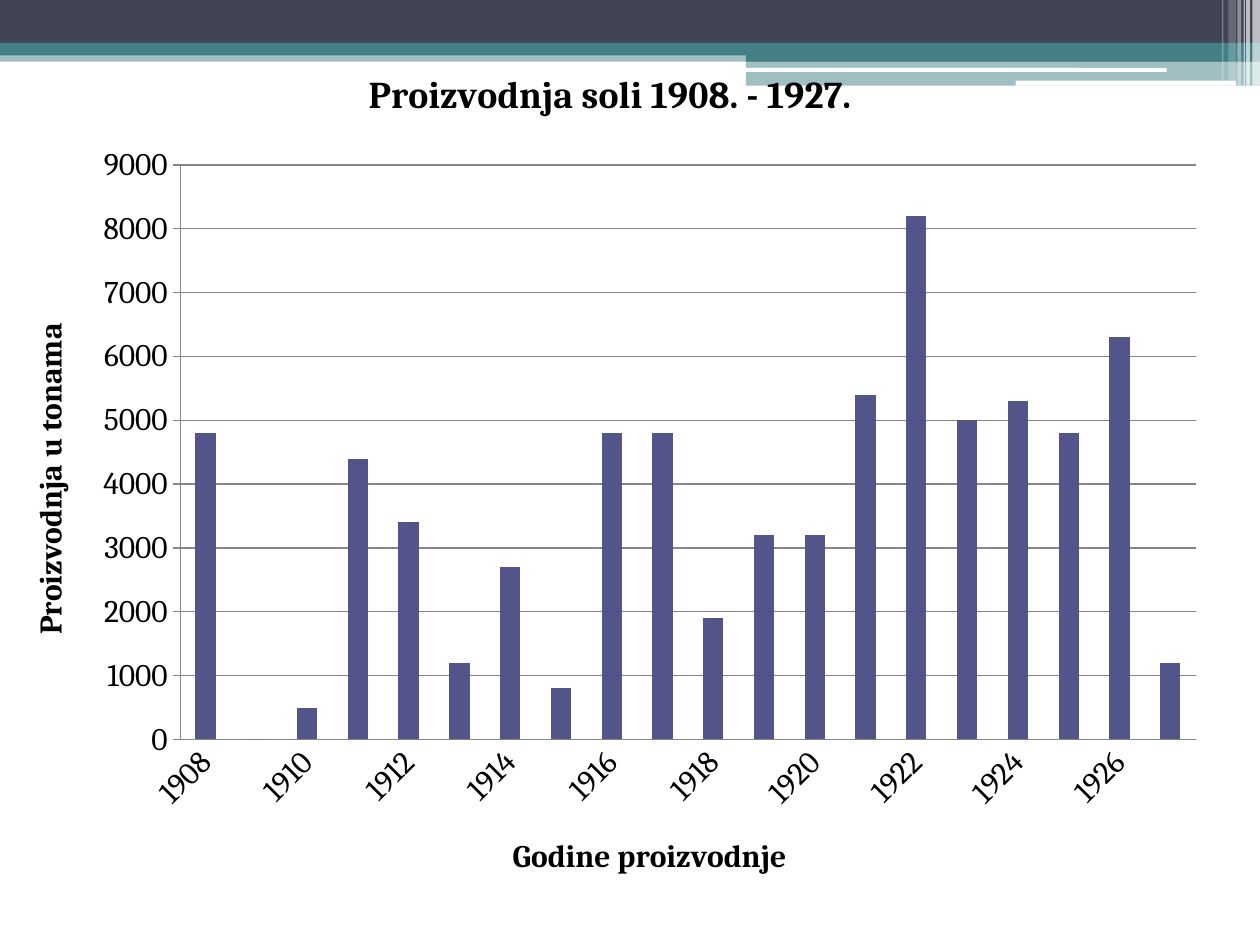
"""Builds a slide with a column chart of salt production from 1908 to 1927."""
from dataclasses import dataclass

from lxml import etree
from pptx import Presentation
from pptx.chart import data as cd
from pptx.dml.color import RGBColor
from pptx.enum import chart as kinds, shapes
from pptx.oxml import ns
from pptx.util import Inches, Pt


@dataclass(frozen=True)
class Theme:
    """Colours, font and type sizes."""
    dark: str = "424456"
    teal: str = "438086"
    white: str = "FFFFFF"
    black: str = "000000"
    bar: str = "53548A"
    grid: str = "868686"
    font: str = "Cambria"
    head: float = 21.6
    body: float = 18


def child(node, tag, **attrs):
    """Append a namespaced element with the given attributes."""
    return etree.SubElement(node, ns.qn(tag), **attrs)


class Deck:
    """Holds the style and the current slide."""

    def __init__(self, theme):
        """Open a blank slide of 10 by 7.5 inches."""
        self.theme = theme
        self.prs = Presentation()
        self.prs.slide_width, self.prs.slide_height = Inches(10), Inches(7.5)
        self.slide = self.prs.slides.add_slide(self.prs.slide_layouts[6])

    def band(self, box, color, alpha=100, round=False):
        """Draw a plain band with a given opacity in percent."""
        kind = shapes.MSO_SHAPE.ROUNDED_RECTANGLE if round else shapes.MSO_SHAPE.RECTANGLE
        band = self.slide.shapes.add_shape(kind, *map(Inches, box))
        band.shadow.inherit = False
        band.line.fill.background()
        band.fill.solid()
        band.fill.fore_color.rgb = RGBColor.from_string(color)
        if alpha < 100:
            tint = band.fill._xPr.find(".//" + ns.qn("a:srgbClr"))
            child(tint, "a:alpha", val=str(alpha * 1000))

    def style(self, font, size, bold=False):
        """Apply the theme font."""
        look = {"name": self.theme.font, "size": Pt(size), "bold": bold}
        for key, value in look.items():
            setattr(font, key, value)
        font.color.rgb = RGBColor.from_string(self.theme.black)

    def title(self, owner, words, size):
        """Give a chart or an axis a bold title."""
        owner.has_title = True
        frame = (owner.chart_title if hasattr(owner, "chart_title") else owner.axis_title).text_frame
        frame.text = words
        self.style(frame.paragraphs[0].runs[0].font, size, True)

    def axis(self, axis, words, looks):
        """Format an axis, its line and its title."""
        self.title(axis, words, self.theme.body)
        for key, value in looks.items():
            setattr(axis, key, value)
        axis.format.line.color.rgb = RGBColor.from_string(self.theme.grid)
        self.style(axis.tick_labels.font, self.theme.body)

    def columns(self, box, name, years, tons, plot):
        """Add the column chart with a fixed plot area on the slide."""
        data = cd.CategoryChartData()
        data.categories = years
        data.add_series(name, tons)
        chart = self.slide.shapes.add_chart(
            kinds.XL_CHART_TYPE.COLUMN_CLUSTERED, *map(Inches, box), data).chart
        chart.has_legend = False
        self.style(chart.font, self.theme.body)
        self.title(chart, name, self.theme.head)
        bars = chart.plots[0]
        bars.gap_width, bars.vary_by_categories = 150, False
        fill = bars.series[0].format.fill
        fill.solid()
        fill.fore_color.rgb = RGBColor.from_string(self.theme.bar)

        tick = kinds.XL_TICK_MARK
        cat, val = chart.category_axis, chart.value_axis
        self.axis(cat, "Godine proizvodnje",
                  {"major_tick_mark": tick.NONE, "minor_tick_mark": tick.NONE})
        self.axis(val, "Proizvodnja u tonama",
                  {"major_tick_mark": tick.OUTSIDE, "minor_tick_mark": tick.NONE,
                   "minimum_scale": 0, "maximum_scale": 9000, "major_unit": 1000,
                   "has_major_gridlines": True})
        val.major_gridlines.format.line.color.rgb = RGBColor.from_string(self.theme.grid)
        cat._element.find(ns.qn("c:txPr")).find(ns.qn("a:bodyPr")).set("rot", "-2700000")
        skip = etree.Element(ns.qn("c:tickLblSkip"), val="2")
        cat._element.find(ns.qn("c:noMultiLvlLbl")).addprevious(skip)
        self.place(chart, box, plot)

    def place(self, chart, box, plot):
        """Fix the inner plot area, given in inches on the slide."""
        area = chart._chartSpace.find(".//" + ns.qn("c:plotArea"))
        for old in area.findall(ns.qn("c:layout")):
            area.remove(old)
        layout = etree.Element(ns.qn("c:layout"))
        area.insert(0, layout)
        spot = child(layout, "c:manualLayout")
        child(spot, "c:layoutTarget", val="inner")
        for key in "xy":
            child(spot, f"c:{key}Mode", val="edge")
        left, top, width, height = box
        x, y, w, h = plot
        parts = {"x": (x - left) / width, "y": (y - top) / height,
                 "w": w / width, "h": h / height}
        for key, value in parts.items():
            child(spot, f"c:{key}", val=str(value))


def main():
    """Build and save the slide."""
    theme = Theme()
    deck = Deck(theme)
    bands = [
        ((0, 0.4, 10, 0.09), theme.teal, 50),
        ((0, 0, 10, 0.34), theme.dark),
        ((0, 0.34, 10, 0.1), theme.teal),
        ((5.92, 0.39, 4.08, 0.1), theme.teal),
        ((5.92, 0.48, 4.08, 0.2), theme.teal, 50),
        ((5.91, 0.54, 3.35, 0.03), theme.white, 100, True),
        ((8.06, 0.64, 1.75, 0.04), theme.white, 100, True),
    ]
    for band in bands:
        deck.band(*band)
    stripes = [(9.94, 0.06, 0.68, 65), (9.89, 0.03, 0.68, 65), (9.87, 0.01, 0.68, 60),
               (9.82, 0.03, 0.68, 40), (9.75, 0.06, 0.64, 20), (9.7, 0.01, 0.64, 30)]
    for left, width, height, alpha in stripes:
        deck.band((left, 0, width, height), theme.white, alpha)

    tons = [4800, 0, 500, 4400, 3400, 1200, 2700, 800, 4800, 4800,
            1900, 3200, 3200, 5400, 8200, 5000, 5300, 4800, 6300, 1200]
    years = [str(year) for year in range(1908, 1928)]
    deck.columns((0, 0.31, 9.69, 6.88), "Proizvodnja soli 1908. - 1927.",
                 years, tons, (1.43, 1.31, 8.06, 4.56))
    deck.prs.save("out.pptx")


if __name__ == "__main__":
    main()
